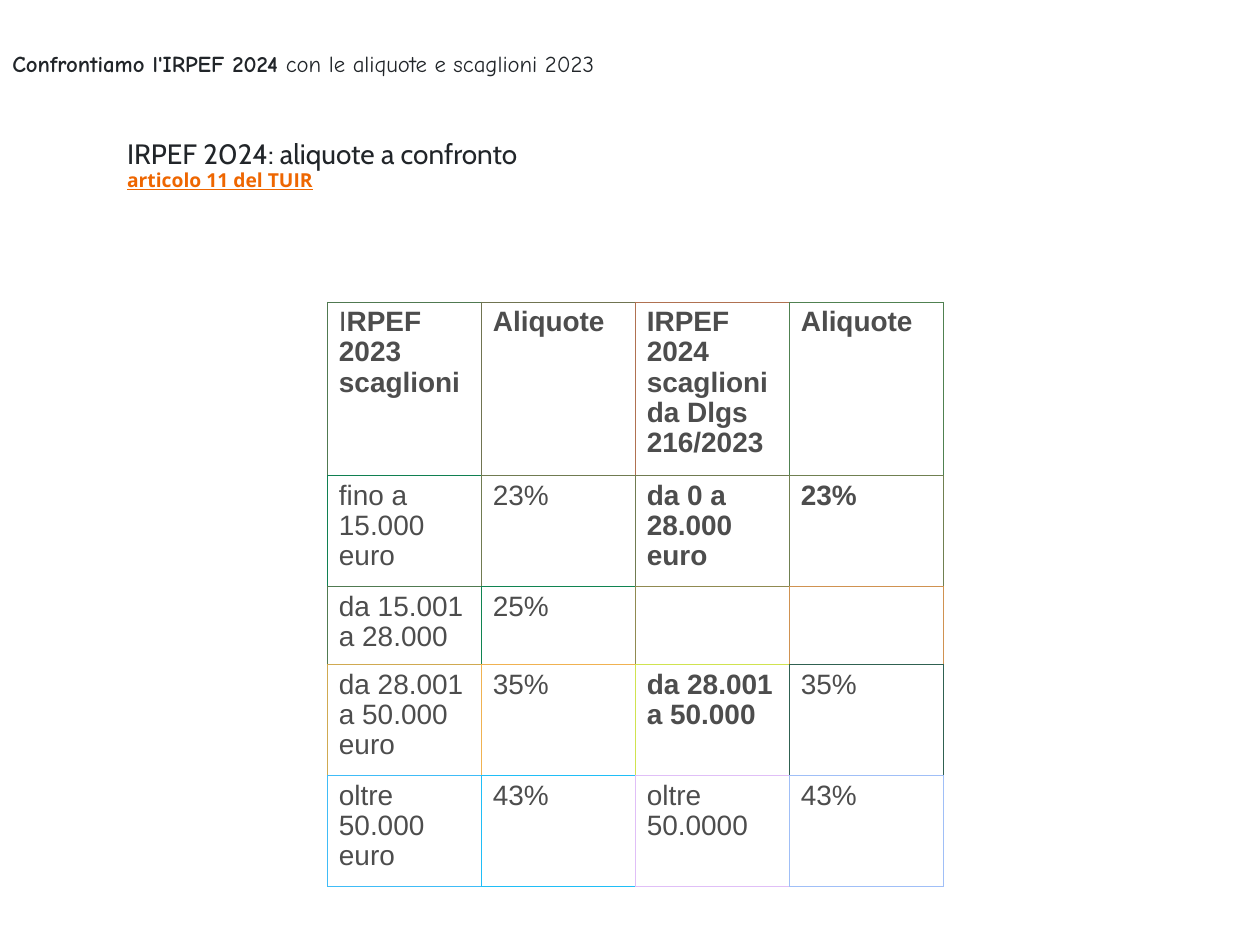
from lxml import etree
from pptx import Presentation
from pptx.dml.color import RGBColor
from pptx.enum.shapes import MSO_SHAPE
from pptx.enum.text import MSO_ANCHOR, PP_ALIGN
from pptx.oxml.ns import qn
from pptx.util import Pt

RECT = MSO_SHAPE.RECTANGLE
MID = MSO_ANCHOR.MIDDLE
LEFT = PP_ALIGN.LEFT

# Content: text runs are (text, bold)
INTRO = [("Confrontiamo l'IRPEF 2024 ", True),
         ("con le aliquote e scaglioni 2023", False)]
TITLE = "IRPEF 2024: aliquote a confronto"
SOURCE = "articolo 11 del TUIR"
ROWS = [
    ["IRPEF 2023 scaglioni", "Aliquote",
     "IRPEF 2024 scaglioni da Dlgs 216/2023", "Aliquote"],
    ["fino a 15.000 euro", "23%", "da 0 a 28.000 euro", "23%"],
    ["da 15.001 a 28.000", "25%", "", ""],
    ["da 28.001 a 50.000 euro", "35%", "da 28.001 a 50.000", "35%"],
    ["oltre 50.000 euro", "43%", "oltre 50.0000", "43%"],
]
BOLD = {(0, 0), (0, 1), (0, 2), (0, 3), (1, 2), (1, 3), (3, 2)}
# Border colour of each cell's left and top edge
EDGES = [
    ["507951", "707451", "B07151", "508151"],
    ["108051", "707B51", "707B51", "708051"],
    ["507A51", "108451", "908A51", "D09251"],
    ["D0AA51", "F0B251", "D0E350", "306151"],
    ["40BCF7", "20BEF7", "E0BFF7", "A0BFF7"],
]
HIGH = [82.8, 63.4, 44.6, 63.4, 63.4]
WIDE = 88


def color(code):
    return RGBColor.from_string(code)


def add_run(para, text, face, size, code, bold=False):
    run = para.add_run()
    run.text = text
    font = run.font
    font.name, font.size, font.bold = face, Pt(size), bold
    font.color.rgb = color(code)
    return run


def add_edge(cell, spot, side, code):
    line = etree.Element(qn("a:ln" + side), w=str(Pt(0.75)))
    fill = etree.SubElement(line, qn("a:solidFill"))
    etree.SubElement(fill, qn("a:srgbClr"), val=code)
    cell._tc.get_or_add_tcPr().insert(spot, line)


deck = Presentation()
deck.slide_width, deck.slide_height = Pt(720), Pt(540)
slide = deck.slides.add_slide(deck.slide_layouts[6])

# Title with its source line
box = slide.shapes.add_textbox(Pt(65.5), Pt(66.2), Pt(589.7), Pt(56.9))
frame = box.text_frame
frame.word_wrap = True
frame.vertical_anchor = MID
para = frame.paragraphs[0]
para.line_spacing = 0.9
add_run(para, TITLE, "Cabin", 16, "212529")
para.add_line_break()
add_run(para, SOURCE, "Open Sans", 11, "EE6600", True).font.underline = True

# Table of brackets and rates
rows, cols = len(ROWS), len(ROWS[0])
table = slide.shapes.add_table(rows, cols, Pt(187.2), Pt(172.8),
                               Pt(WIDE * cols), Pt(sum(HIGH))).table
table.first_row = table.horz_banding = False
for col in table.columns:
    col.width = Pt(WIDE)
for row, high in zip(table.rows, HIGH):
    row.height = Pt(high)

for r, texts in enumerate(ROWS):
    for c, text in enumerate(texts):
        cell = table.cell(r, c)
        cell.fill.background()
        cell.margin_left = cell.margin_right = Pt(6.5)
        cell.margin_top = cell.margin_bottom = Pt(3)
        # Right and bottom edges take the colour of the next cell
        own = EDGES[r][c]
        right = EDGES[r][min(c + 1, cols - 1)]
        below = EDGES[min(r + 1, rows - 1)][c]
        sides = [("L", own), ("R", right), ("T", own), ("B", below)]
        for spot, (side, code) in enumerate(sides):
            add_edge(cell, spot, side, code)
        para = cell.text_frame.paragraphs[0]
        para.line_spacing = 0.97
        if text:
            bold = (r, c) in BOLD
            parts = [(text, bold)]
            if (r, c) == (0, 0):
                parts = [(text[0], False), (text[1:], True)]
            for part, heavy in parts:
                add_run(para, part, "Arial", 16, "4D4D4D", heavy)

# Introductory line
bar = slide.shapes.add_shape(RECT, Pt(0), Pt(24.5), Pt(422.6), Pt(23))
bar.shadow.inherit = False
bar.fill.solid()
bar.fill.fore_color.rgb = color("FFFFFF")
bar.line.fill.background()
frame = bar.text_frame
frame.word_wrap = True
frame.vertical_anchor = MID
para = frame.paragraphs[0]
para.alignment = LEFT
for text, bold in INTRO:
    add_run(para, text, "Comic Neue", 13, "212529", bold)

deck.save("out.pptx")
